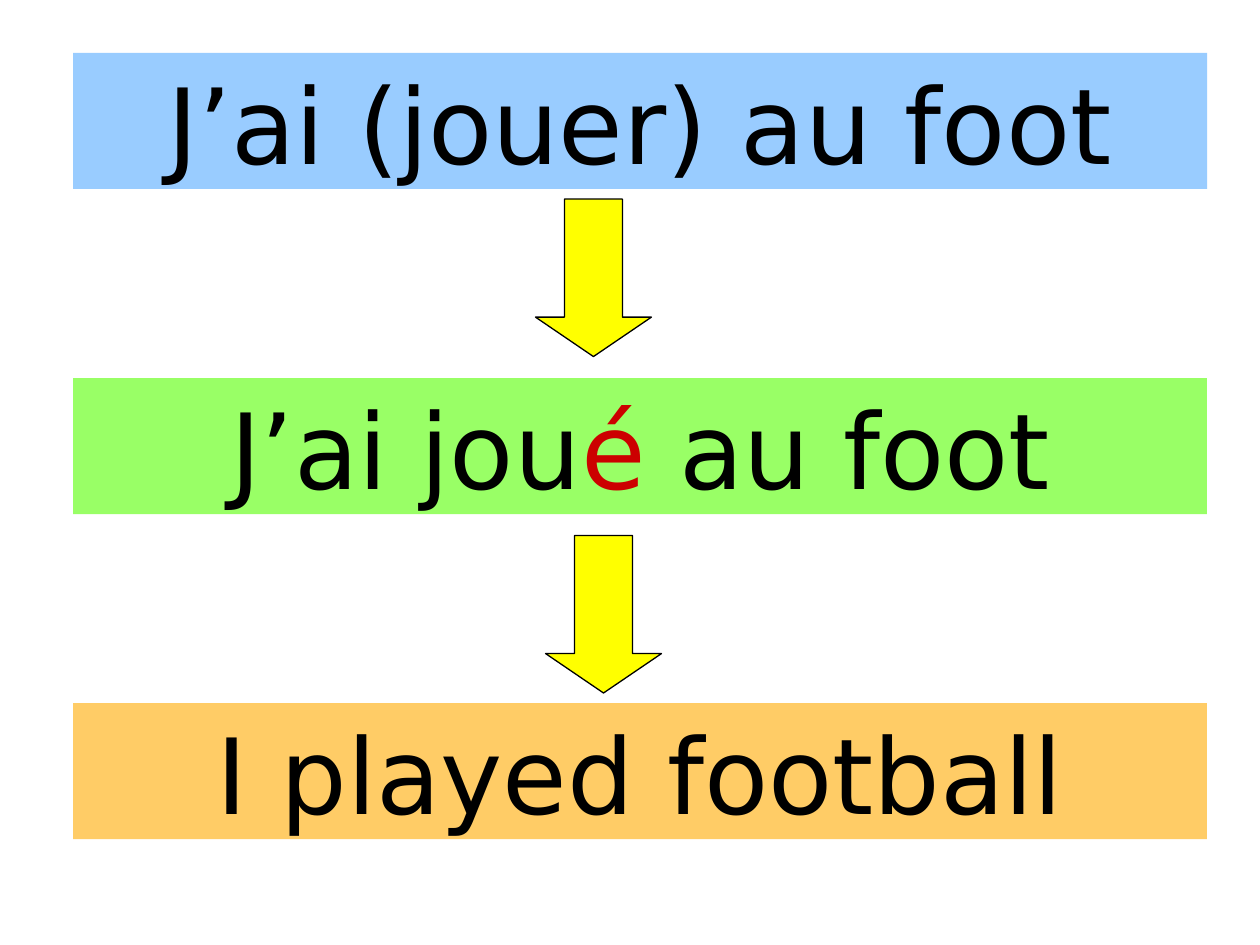
from pptx import Presentation
from pptx.dml.color import RGBColor
from pptx.enum.shapes import MSO_SHAPE
from pptx.enum.text import MSO_ANCHOR, MSO_AUTO_SIZE, PP_ALIGN
from pptx.util import Inches, Pt

BLUE = RGBColor(0x99, 0xCC, 0xFF)
GREEN = RGBColor(0x99, 0xFF, 0x66)
ORANGE = RGBColor(0xFF, 0xCC, 0x66)
YELLOW = RGBColor(0xFF, 0xFF, 0x00)
BLACK = RGBColor(0x00, 0x00, 0x00)
RED = RGBColor(0xCC, 0x00, 0x00)

BAND_LEFT, BAND_TOP, BAND_STEP = 0.58, 0.42, 2.58
BAND_WIDTH, BAND_HEIGHT = 9, 1.08
FRAME_FORMAT = {
    "word_wrap": True,
    "auto_size": MSO_AUTO_SIZE.NONE,
    "vertical_anchor": MSO_ANCHOR.TOP,
}
PARAGRAPH_FORMAT = {"alignment": PP_ALIGN.CENTER, "space_before": Pt(3.6)}
FONT_FORMAT = {"name": "DejaVu Sans", "size": Pt(60)}


def apply_format(target, values):
    for attribute, value in values.items():
        setattr(target, attribute, value)


prs = Presentation()
prs.slide_width, prs.slide_height = Inches(10), Inches(7.5)
slide = prs.slides.add_slide(prs.slide_layouts[0])
unused_title = slide.shapes.title.element
unused_title.getparent().remove(unused_title)

# Sentences: prompt, perfect tense with its ending in red, translation
sentences = [
    (BLUE, [("J’ai (jouer) au foot", BLACK)]),
    (GREEN, [("J’ai jou", BLACK), ("é", RED), (" au foot", BLACK)]),
    (ORANGE, [("I played football", BLACK)]),
]
for row, (band_color, parts) in enumerate(sentences):
    box = [Inches(v) for v in
           (BAND_LEFT, BAND_TOP + row * BAND_STEP, BAND_WIDTH, BAND_HEIGHT)]
    if row == 0:
        band = slide.placeholders[1]
        apply_format(band, dict(zip(("left", "top", "width", "height"), box)))
    else:
        band = slide.shapes.add_shape(MSO_SHAPE.RECTANGLE, *box)
        band.shadow.inherit = False
    band.fill.solid()
    band.fill.fore_color.rgb = band_color
    band.line.fill.background()
    apply_format(band.text_frame, FRAME_FORMAT)
    sentence = band.text_frame.paragraphs[0]
    apply_format(sentence, PARAGRAPH_FORMAT)
    for text, color in parts:
        run = sentence.add_run()
        run.text = text
        apply_format(run.font, FONT_FORMAT)
        run.font.color.rgb = color

# Arrows leading from each sentence to the next
for left, top in [(4.25, 1.58), (4.33, 4.25)]:
    arrow = slide.shapes.add_shape(
        MSO_SHAPE.DOWN_ARROW, Inches(left), Inches(top), Inches(0.92), Inches(1.25))
    arrow.adjustments[0] = 0.5
    arrow.adjustments[1] = 0.34
    arrow.shadow.inherit = False
    arrow.fill.solid()
    arrow.fill.fore_color.rgb = YELLOW
    arrow.line.color.rgb = BLACK
    arrow.line.width = Pt(0.75)

prs.save("out.pptx")
